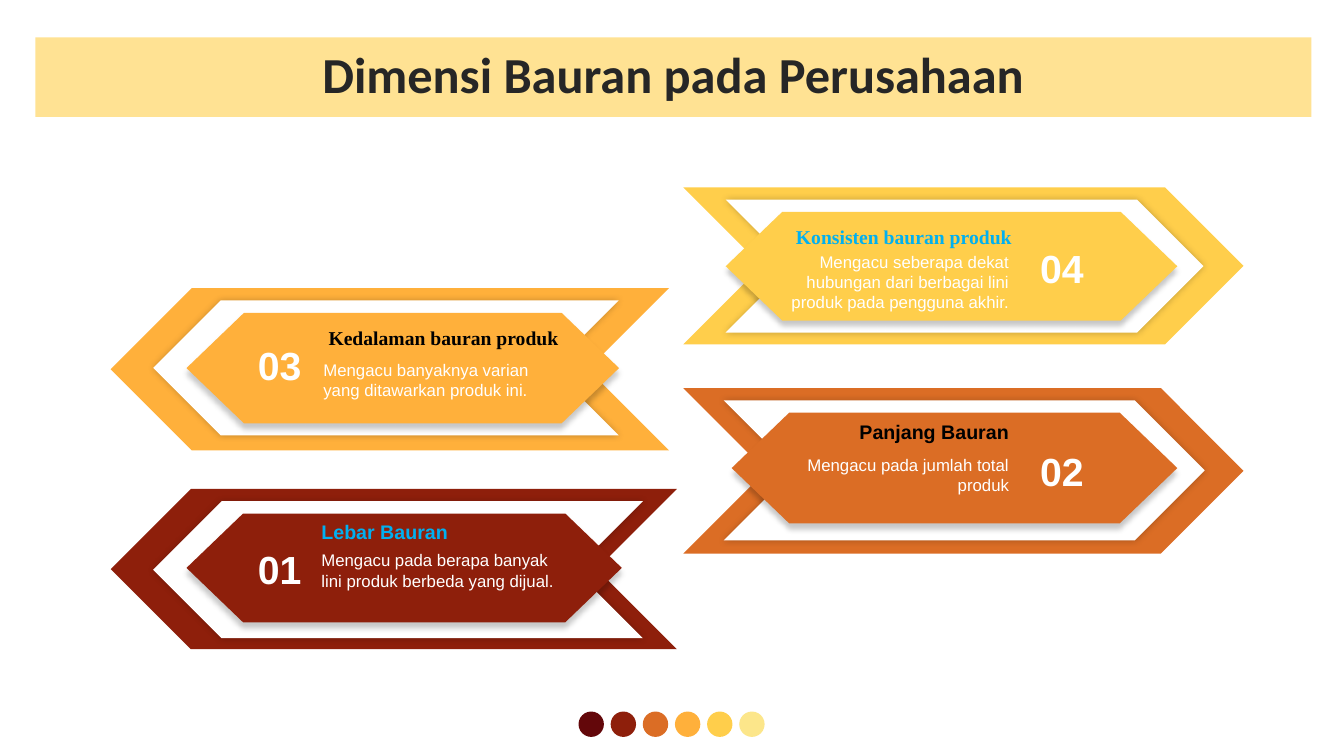
import pptx
import pptx.util
import pptx.dml.color
import pptx.enum.shapes
import pptx.enum.text
import pptx.oxml
import pptx.oxml.ns

Cm, Pt = pptx.util.Cm, pptx.util.Pt
SHAPES = pptx.enum.shapes.MSO_SHAPE
ALIGN = pptx.enum.text.PP_ALIGN
ANCHOR = pptx.enum.text.MSO_ANCHOR

WHITE, BLACK, BLUE = "FFFFFF", "000000", "00B0F0"
DOT_COLORS = ["63070A", "8E1F0B", "DB6D25", "FFB03B", "FFCE4B", "FCE68A"]
RING = 0.31  # gap between the tops of the nested shapes
NUMBER_SIZE = (1.8, 1.45)

# Boxes are (left, top, width, height); inner and core are (left, width, height).
ARROWS = [
    dict(number="04", color="FFCE4B", right=True, outer=(17.22, 4.72, 14.12, 3.96),
         inner=(18.29, 12.04, 3.35), core=(18.29, 11.38, 2.74), number_at=(25.86, 6.02),
         heading=("Konsisten bauran produk", "Times New Roman", BLUE),
         heading_box=(19.63, 5.54, 6.12, 0.86),
         body="Mengacu seberapa dekat hubungan dari berbagai lini produk pada pengguna akhir.",
         body_box=(19.63, 6.22, 6.05, 1.8)),
    dict(number="02", color="DB6D25", right=True, outer=(17.22, 9.78, 14.12, 4.17),
         inner=(18.24, 12.12, 3.53), core=(18.44, 11.23, 2.79), number_at=(25.86, 11.15),
         heading=("Panjang Bauran", "Arial", BLACK),
         heading_box=(19.56, 10.46, 6.12, 0.86),
         body="Mengacu pada jumlah total produk",
         body_box=(19.63, 11.33, 6.05, 1.27)),
    dict(number="03", color="FFB03B", right=False, outer=(2.79, 7.26, 14.07, 4.09),
         inner=(3.86, 11.73, 3.4), core=(4.7, 10.9, 2.79), number_at=(6.15, 8.48),
         heading=("Kedalaman bauran produk", "Times New Roman", BLACK),
         heading_box=(8.03, 8.08, 7.16, 0.86),
         body="Mengacu banyaknya varian yang ditawarkan produk ini.",
         body_box=(7.9, 8.94, 6.05, 1.27)),
    dict(number="01", color="8E1F0B", right=False, outer=(2.79, 12.32, 14.27, 4.04),
         inner=(3.86, 12.34, 3.45), core=(4.7, 10.97, 2.74), number_at=(6.15, 13.61),
         heading=("Lebar Bauran", "Arial", BLUE),
         heading_box=(7.85, 12.98, 6.12, 0.86),
         body="Mengacu pada berapa banyak lini produk berbeda yang dijual.",
         body_box=(7.85, 13.74, 6.5, 1.27)),
]


def rgb(value):
    return pptx.dml.color.RGBColor.from_string(value)


class SlideBuilder:
    def __init__(self, slide, font="Arial"):
        self.slide = slide
        self.font = font

    def shape(self, kind, box, fill, rotation=0):
        shape = self.slide.shapes.add_shape(kind, *map(Cm, box))
        shape.shadow.inherit = False
        shape.fill.solid()
        shape.fill.fore_color.rgb = rgb(fill)
        shape.line.fill.background()
        shape.rotation = rotation
        return shape

    def shadow(self, shape, blur, distance=0, direction=0):
        """Add a soft black outer shadow; blur and distance in points."""
        effects = shape._element.spPr.find(pptx.oxml.ns.qn("a:effectLst"))
        effects.append(pptx.oxml.parse_xml(
            f'<a:outerShdw {pptx.oxml.ns.nsdecls("a")} blurRad="{Pt(blur)}" '
            f'dist="{Pt(distance)}" dir="{direction * 60000}" rotWithShape="0">'
            '<a:srgbClr val="000000"><a:alpha val="22000"/></a:srgbClr></a:outerShdw>'))

    def fill_text(self, frame, text, size, color, align, bold=False, font=None):
        frame.word_wrap = True
        paragraph = frame.paragraphs[0]
        paragraph.text = text
        paragraph.alignment = align
        paragraph.font.size = Pt(size)
        paragraph.font.bold = bold
        paragraph.font.name = font or self.font
        paragraph.font.color.rgb = rgb(color)
        return paragraph

    def text(self, box, *args, side_inset=0.25, **style):
        frame = self.slide.shapes.add_textbox(*map(Cm, box)).text_frame
        frame.margin_left = frame.margin_right = Cm(side_inset)
        frame.auto_size = pptx.enum.text.MSO_AUTO_SIZE.SHAPE_TO_FIT_TEXT
        self.fill_text(frame, *args, **style)

    def title(self, text):
        banner = self.shape(SHAPES.RECTANGLE, (0.89, 0.94, 32.16, 2.01), "FFE293")
        banner.text_frame.vertical_anchor = ANCHOR.MIDDLE
        paragraph = self.fill_text(banner.text_frame, text, 36, "262626", ALIGN.CENTER,
                                   bold=True, font="Calibri")
        paragraph.line_spacing = 0.9

    def arrow(self, number, color, right, outer, inner, core, number_at,
              heading, heading_box, body, body_box):
        rotation = 0 if right else 180
        align = ALIGN.RIGHT if right else ALIGN.LEFT
        top = outer[1]
        self.shape(SHAPES.CHEVRON, outer, color, rotation)
        gap = self.shape(SHAPES.CHEVRON, (inner[0], top + RING, *inner[1:]), WHITE, rotation)
        self.shadow(gap, 5)
        hexagon = self.shape(SHAPES.HEXAGON, (core[0], top + 2 * RING, *core[1:]),
                             color, rotation)
        hexagon.adjustments[0] = 0.52
        self.shadow(hexagon, 4, 4, 90)
        self.text((*number_at, *NUMBER_SIZE), number, 28, WHITE, ALIGN.CENTER,
                  bold=True, side_inset=0.3)
        self.text(body_box, body, 12, WHITE, align)
        words, font, heading_color = heading
        self.text(heading_box, words, 14, heading_color, align, bold=True, font=font)

    def dots(self, colors, left=14.58, top=17.93, size=0.64, pitch=0.81):
        for index, color in enumerate(colors):
            self.shape(SHAPES.OVAL, (left + index * pitch, top, size, size), color)


def main():
    presentation = pptx.Presentation()
    presentation.slide_width, presentation.slide_height = Cm(33.87), Cm(19.05)
    builder = SlideBuilder(presentation.slides.add_slide(presentation.slide_layouts[6]))
    builder.dots(DOT_COLORS)
    builder.title("Dimensi Bauran pada Perusahaan")
    for arrow in ARROWS:
        builder.arrow(**arrow)
    presentation.save("out.pptx")


if __name__ == "__main__":
    main()
